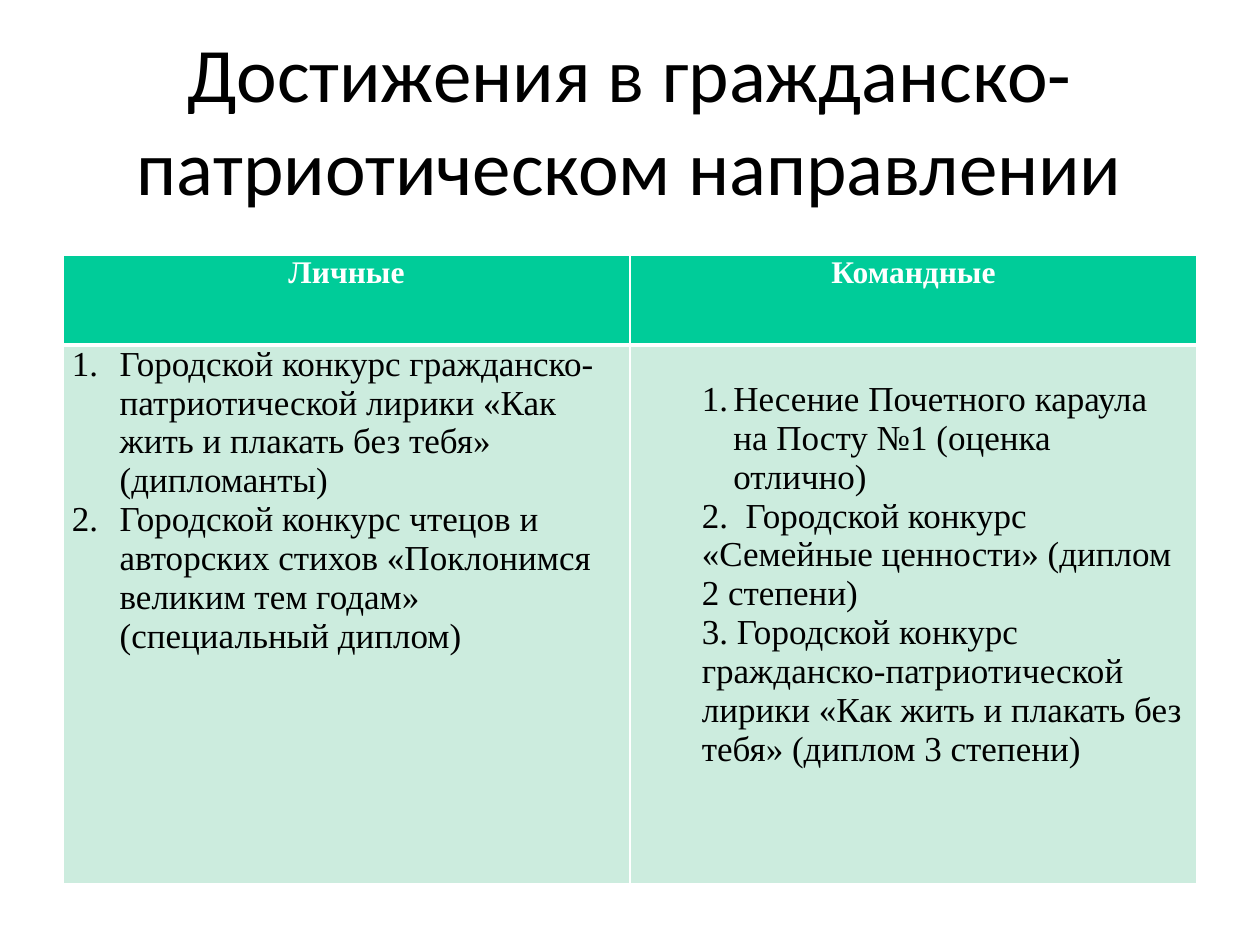
from dataclasses import dataclass

from lxml import etree
from pptx import Presentation
from pptx.dml.color import RGBColor
from pptx.enum.text import MSO_ANCHOR, PP_ALIGN
from pptx.oxml.ns import qn
from pptx.util import Inches, Pt

CENTER, LEFT = PP_ALIGN.CENTER, PP_ALIGN.LEFT
MIDDLE, TOP = MSO_ANCHOR.MIDDLE, MSO_ANCHOR.TOP
WIDTH, HEIGHT = Inches(10), Inches(7.5)


@dataclass(frozen=True)
class Theme:
    """Colours, fonts and type sizes of the deck."""
    text: str = "000000"
    light: str = "FFFFFF"
    header_fill: str = "00CC99"
    body_fill: str = "CCECDE"
    title_font: str = "Calibri"
    table_font: str = "Times New Roman"
    title_size: int = 44
    header_size: int = 18
    body_size: int = 20
    thin_rule: int = 1
    thick_rule: int = 3


@dataclass(frozen=True)
class Item:
    """A table paragraph with its indents in inches."""
    text: str
    indent: float = 0
    hanging: float = 0


class SlideBuilder:
    """Draws styled elements on the current slide."""

    def __init__(self, slide, theme):
        """Keep the slide and its theme."""
        self.slide = slide
        self.theme = theme

    def box(self, left, top, width, height):
        """Turn shares of the slide into lengths."""
        return (round(WIDTH * left), round(HEIGHT * top),
                round(WIDTH * width), round(HEIGHT * height))

    def format(self, paragraph, font, size, color, bold=False, alignment=LEFT):
        """Style a paragraph and its runs."""
        paragraph.alignment = alignment
        for run in paragraph.runs:
            run.font.name = font
            run.font.size = Pt(size)
            run.font.bold = bold
            run.font.color.rgb = RGBColor.from_string(color)

    def title(self, text, *shares):
        """Add the centred slide title."""
        frame = self.slide.shapes.add_textbox(*self.box(*shares)).text_frame
        frame.word_wrap = True
        frame.vertical_anchor = MIDDLE
        frame.text = text
        self.format(frame.paragraphs[0], self.theme.title_font,
                    self.theme.title_size, self.theme.text, alignment=CENTER)

    def table(self, headers, bodies, row_shares, left, top, width):
        """Add a header row above a row of item lists."""
        shape = self.slide.shapes.add_table(
            2, len(headers), *self.box(left, top, width, sum(row_shares)))
        table = shape.table
        for row, share in zip(table.rows, row_shares):
            row.height = round(HEIGHT * share)
        for column, (header, (items, margin)) in enumerate(zip(headers, bodies)):
            self.header_cell(table.cell(0, column), header)
            self.body_cell(table.cell(1, column), items, margin)

    def header_cell(self, cell, text):
        """Fill a header cell."""
        theme = self.theme
        self.cell(cell, theme.header_fill, theme.thin_rule, theme.thick_rule)
        cell.text_frame.text = text
        self.format(cell.text_frame.paragraphs[0], theme.table_font,
                    theme.header_size, theme.light, True, CENTER)

    def body_cell(self, cell, items, margin):
        """Fill a body cell with its items."""
        theme = self.theme
        self.cell(cell, theme.body_fill, theme.thick_rule, theme.thin_rule, margin)
        cell.text_frame.text = "\n".join(item.text for item in items)
        for paragraph, item in zip(cell.text_frame.paragraphs, items):
            self.format(paragraph, theme.table_font, theme.body_size, theme.text)
            self.indent(paragraph, item)

    def cell(self, cell, fill, top_rule, bottom_rule, margin=0):
        """Set the margins, borders and fill of a cell."""
        cell.margin_left = cell.margin_right = Inches(0.07)
        cell.margin_top, cell.margin_bottom = Inches(margin), 0
        cell.vertical_anchor = TOP
        thin = self.theme.thin_rule
        properties = cell._tc.get_or_add_tcPr()
        for side, width in zip("LRTB", (thin, thin, top_rule, bottom_rule)):
            line = etree.SubElement(properties, qn(f"a:ln{side}"), w=str(Pt(width)))
            solid = etree.SubElement(line, qn("a:solidFill"))
            etree.SubElement(solid, qn("a:srgbClr"), val=self.theme.light)
        cell.fill.solid()
        cell.fill.fore_color.rgb = RGBColor.from_string(fill)

    def indent(self, paragraph, item):
        """Indent a paragraph and number it when it hangs."""
        properties = paragraph._p.get_or_add_pPr()
        properties.set("marL", str(Inches(item.indent)))
        properties.set("indent", str(-Inches(item.hanging)))
        if item.hanging:
            etree.SubElement(properties, qn("a:buFont"), typeface=self.theme.table_font)
            etree.SubElement(properties, qn("a:buAutoNum"), type="arabicPeriod")


def main():
    """Build and save the presentation."""
    presentation = Presentation()
    presentation.slide_width, presentation.slide_height = WIDTH, HEIGHT
    slide = presentation.slides.add_slide(presentation.slide_layouts[6])
    builder = SlideBuilder(slide, Theme())
    builder.title("Достижения в гражданско-патриотическом направлении",
                  0.05, 0.02, 0.9, 0.21)
    personal = [
        Item("Городской конкурс гражданско-патриотической лирики "
             "«Как жить и плакать без тебя» (дипломанты)", 0.38, 0.38),
        Item("Городской конкурс чтецов и авторских стихов "
             "«Поклонимся великим тем годам» (специальный диплом)", 0.38, 0.38),
    ]
    team = [
        Item("Несение Почетного караула на Посту №1 (оценка отлично)", 0.75, 0.25),
        Item("2.  Городской конкурс «Семейные ценности» (диплом 2 степени)", 0.5),
        Item("3. Городской конкурс гражданско-патриотической лирики "
             "«Как жить и плакать без тебя» (диплом 3 степени)", 0.5),
    ]
    builder.table(["Личные", "Командные"], [(personal, 0), (team, 0.28)],
                  (0.095, 0.57), 0.05, 0.27, 0.9)
    presentation.save("out.pptx")


if __name__ == "__main__":
    main()
